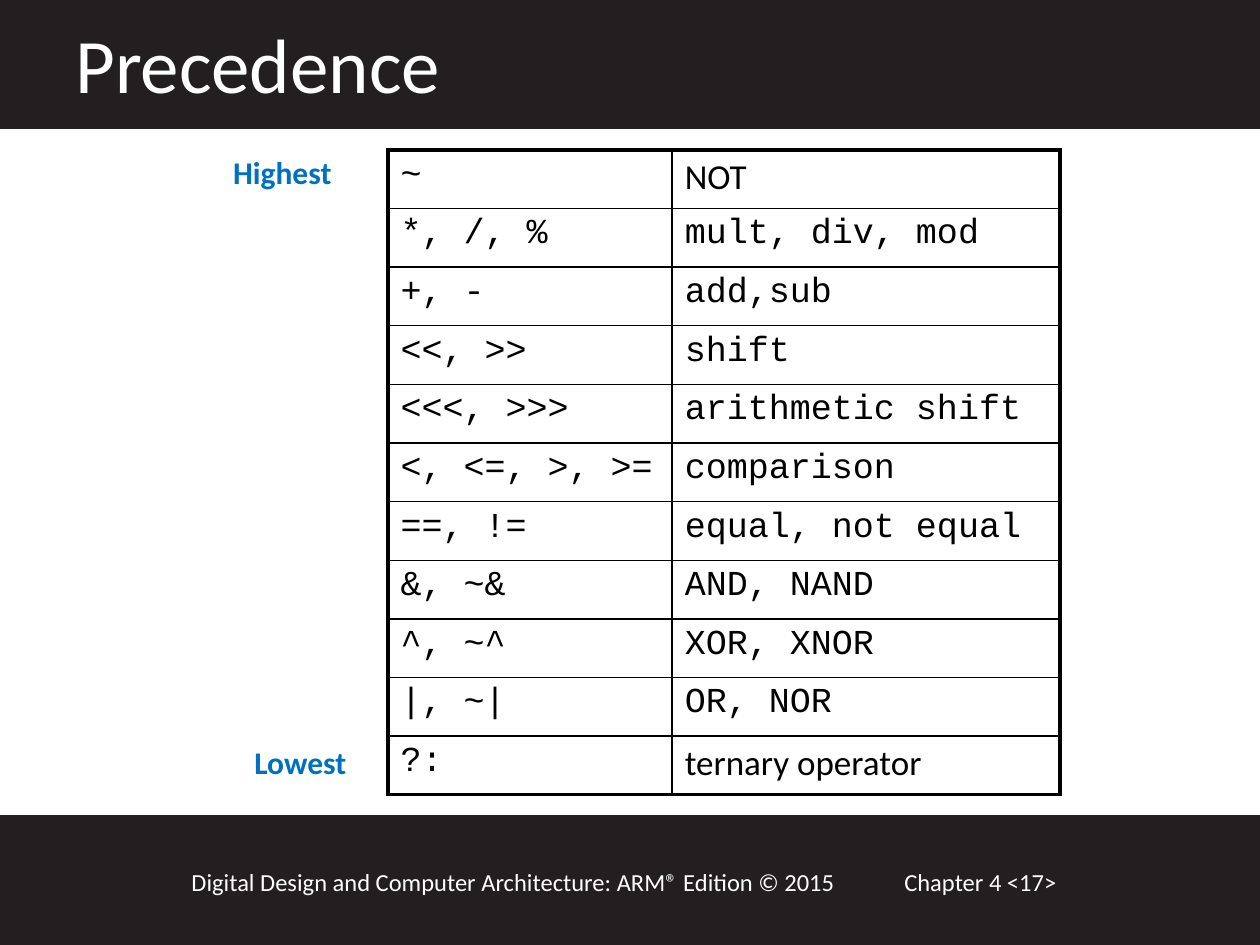
from lxml import etree
from pptx import Presentation
from pptx.dml.color import RGBColor
from pptx.enum.shapes import MSO_SHAPE
from pptx.oxml.ns import qn
from pptx.util import Cm, Pt

RECT = MSO_SHAPE.RECTANGLE
SANS, MONO = "Calibri", "Courier New"
DARK, WHITE, BLACK, BLUE = "231F20", "FFFFFF", "000000", "0070C0"
THIN, THICK = 1, 2.25

# operator, meaning, font of the meaning; highest precedence first
ROWS = [
    ("~", "NOT", SANS),
    ("*, /, %", "mult, div, mod", MONO),
    ("+, -", "add,sub", MONO),
    ("<<, >>", "shift", MONO),
    ("<<<, >>>", "arithmetic shift", MONO),
    ("<, <=, >, >=", "comparison", MONO),
    ("==, !=", "equal, not equal", MONO),
    ("&, ~&", "AND, NAND", MONO),
    ("^, ~^", "XOR, XNOR", MONO),
    ("|, ~|", "OR, NOR", MONO),
    ("?:", "ternary operator", SANS),
]
WIDTHS = (5.73, 7.82)
HIGH = 13.01

# top, height in cm
BANDS = [(16.46, 2.59), (0, 2.57)]

# text, box in cm, format
TEXTS = [
    ("Chapter 4 <17>", (17.98, 17.35, 5.51, 0.86), dict(size=14, color=WHITE)),
    ("Digital Design and Computer Architecture: ARM® Edition © 2015",
     (3.61, 17.35, 14.6, 0.86), dict(size=14, color=WHITE)),
    ("Highest", (4.45, 2.97, 4.88, 1.02), dict(size=18, color=BLUE, bold=True)),
    ("Lowest", (4.88, 14.86, 4.88, 1.02), dict(size=18, color=BLUE, bold=True)),
    ("Precedence", (1.27, 0.2, 22.02, 2.13), dict(size=44, color=WHITE)),
]


def rgb(code):
    return RGBColor.from_string(code)


def write(frame, text, size=20, font=SANS, color=BLACK, bold=False):
    frame.word_wrap = True
    run = frame.paragraphs[0].add_run()
    run.text = text
    run.font.size = Pt(size)
    run.font.name = font
    run.font.bold = bold
    run.font.color.rgb = rgb(color)


def border(cell, sides):
    """Draw the cell's edges; sides maps L, R, T, B to widths in points."""
    props = cell._tc.get_or_add_tcPr()
    for at, side in enumerate("LRTB"):
        line = etree.Element(qn("a:ln" + side), w=str(Pt(sides[side])))
        fill = etree.SubElement(line, qn("a:solidFill"))
        etree.SubElement(fill, qn("a:srgbClr"), val=BLACK)
        props.insert(at, line)


def add_band(slide, top, high):
    band = slide.shapes.add_shape(RECT, 0, Cm(top), Cm(25.4), Cm(high))
    band.shadow.inherit = False
    band.fill.solid()
    band.fill.fore_color.rgb = rgb(DARK)
    band.line.color.rgb = rgb(DARK)
    band.line.width = Pt(2)


def add_grid(slide):
    count = len(ROWS)
    frame = slide.shapes.add_table(count, len(WIDTHS), Cm(7.82), Cm(3.02),
                                   Cm(sum(WIDTHS)), Cm(HIGH))
    table = frame.table
    table.first_row = table.horz_banding = False
    for col, width in zip(table.columns, WIDTHS):
        col.width = Cm(width)
    for r, (sign, name, font) in enumerate(ROWS):
        table.rows[r].height = Cm(HIGH / count)
        for c, (text, face) in enumerate([(sign, MONO), (name, font)]):
            cell = table.cell(r, c)
            cell.fill.background()
            write(cell.text_frame, text, font=face)
            border(cell, {
                "L": THICK if c == 0 else THIN,
                "R": THICK if c == len(WIDTHS) - 1 else THIN,
                "T": THICK if r == 0 else THIN,
                "B": THICK if r == count - 1 else THIN,
            })


def main():
    deck = Presentation()
    deck.slide_width, deck.slide_height = Cm(25.4), Cm(19.05)
    slide = deck.slides.add_slide(deck.slide_layouts[6])
    for top, high in BANDS:
        add_band(slide, top, high)
    add_grid(slide)
    for text, box, style in TEXTS:
        area = slide.shapes.add_textbox(*map(Cm, box))
        write(area.text_frame, text, **style)
    deck.save("out.pptx")


if __name__ == "__main__":
    main()
